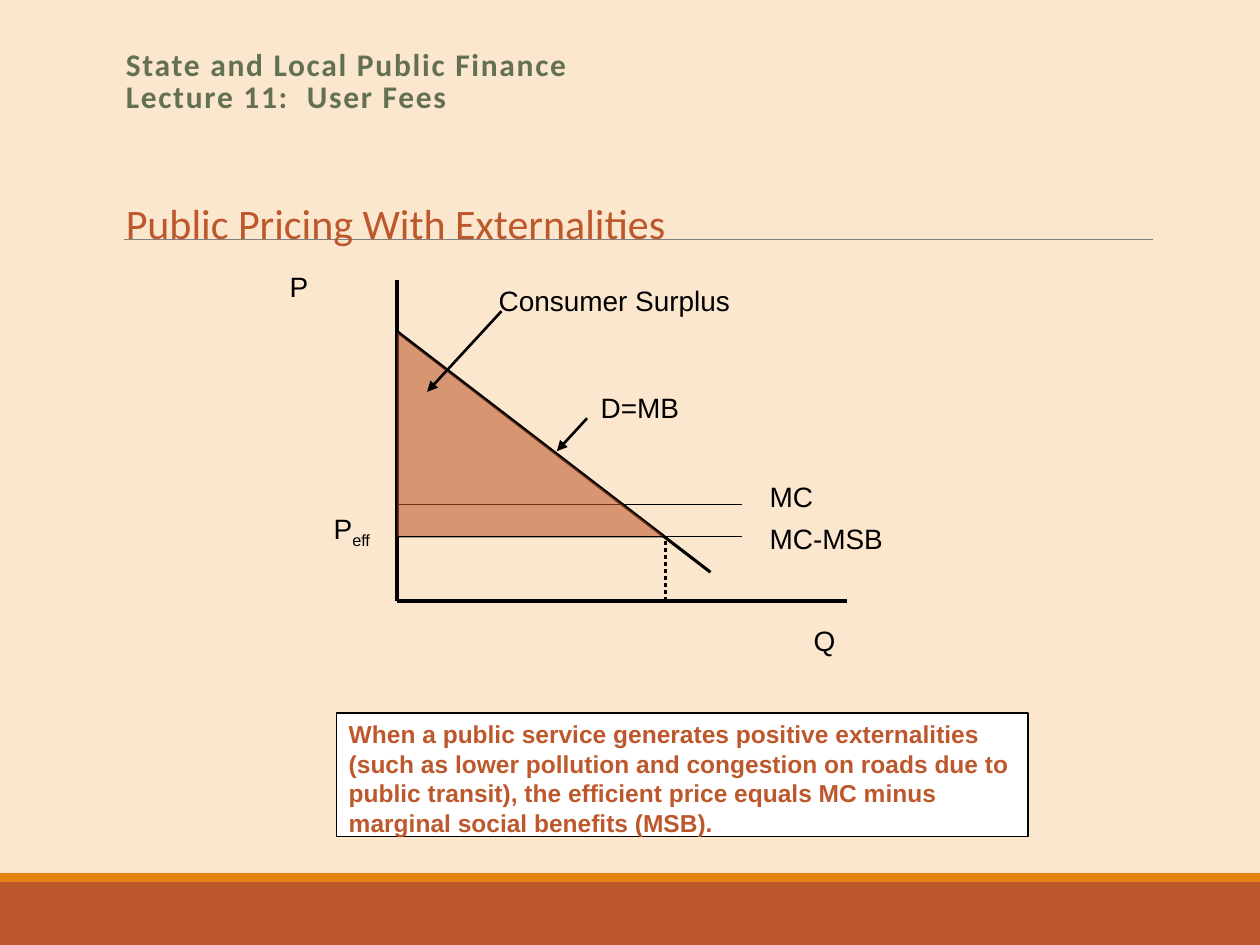
from dataclasses import dataclass

from lxml import etree
from pptx import Presentation
from pptx.dml.color import RGBColor
from pptx.enum.dml import MSO_LINE
from pptx.enum.shapes import MSO_CONNECTOR, MSO_SHAPE
from pptx.enum.text import MSO_ANCHOR
from pptx.oxml.ns import qn
from pptx.util import Pt

RECTANGLE, TRIANGLE = MSO_SHAPE.RECTANGLE, MSO_SHAPE.RIGHT_TRIANGLE
STRAIGHT = MSO_CONNECTOR.STRAIGHT
DOTTED = MSO_LINE.ROUND_DOT
TOP, MIDDLE = MSO_ANCHOR.TOP, MSO_ANCHOR.MIDDLE


@dataclass(frozen=True)
class Theme:
    background: str = "FBE6CE"
    rust: str = "BD582C"
    orange: str = "E48312"
    green: str = "637052"
    gray: str = "808080"
    black: str = "000000"
    white: str = "FFFFFF"
    heading_font: str = "Calibri"
    body_font: str = "Arial"
    title_size: int = 24
    header_size: int = 18
    label_size: int = 16
    note_size: int = 14


THEME = Theme()
WIDTH, HEIGHT = 720, 540
FOOTER_TOP, STRIPE_HEIGHT = 504, 5

HEADER = ["State and Local Public Finance", "Lecture 11:  User Fees"]
TITLE = "Public Pricing With Externalities"
NOTE = ("When a public service generates positive externalities (such as lower "
        "pollution and congestion on roads due to public transit), the efficient "
        "price equals MC minus marginal social benefits (MSB).")

# Diagram coordinates
AXIS_X, AXIS_Y = 226.8, 343.4
DEMAND_TOP = 189.4
QUANTITY, PRICE = 380.2, 306.7
COST, COST_END = 288.3, 424.1

# start, end, weight, dash, arrowhead
AXES_AND_DEMAND = [
    ((AXIS_X, 159.8), (AXIS_X, AXIS_Y), 2, None, False),
    ((AXIS_X, AXIS_Y), (483.8, AXIS_Y), 2, None, False),
    ((AXIS_X, DEMAND_TOP), (406, 327), 1.75, None, False),
    ((QUANTITY, AXIS_Y), (QUANTITY, PRICE), 2, DOTTED, False),
    ((335.5, 239), (318.2, 257.8), 1.5, None, True),
    ((AXIS_X, COST), (COST_END, COST), 0.75, None, False),
]
SURPLUS_ARROW_AND_PRICE = [
    ((286.6, 177.8), (244.1, 223.9), 1.5, None, True),
    ((AXIS_X, PRICE), (COST_END, PRICE), 0.75, None, False),
]

# text, subscript, box
LABELS = [
    ("P", "", (158.4, 150.5, 26, 36.7)),
    ("Q", "", (457.9, 352.8, 26, 36.7)),
    ("MC", "", (432.7, 270.7, 97.2, 27.4)),
    ("MC-MSB", "", (432.7, 294.5, 97.2, 27.4)),
    ("D=MB", "", (336.2, 219.6, 85.7, 27.4)),
    ("P", "eff", (183.6, 288.7, 77, 55.4)),
    ("Consumer Surplus", "", (277.9, 158.4, 172, 28.8)),
]


def rgb(color):
    return RGBColor.from_string(color)


def add_line(slide, start, end, weight, dash=None, arrow=False, color=THEME.black):
    line = slide.shapes.add_connector(STRAIGHT, *map(Pt, start + end))
    line.line.color.rgb = rgb(color)
    line.line.width = Pt(weight)
    if dash:
        line.line.dash_style = dash
    properties = line._element.spPr
    if arrow:
        outline = properties.find(qn("a:ln"))
        etree.SubElement(outline, qn("a:tailEnd"), type="triangle")
    etree.SubElement(properties, qn("a:effectLst"))


def add_block(slide, kind, box, fill, outline=None, opacity=None):
    shape = slide.shapes.add_shape(kind, *map(Pt, box))
    shape.shadow.inherit = False
    shape.fill.solid()
    shape.fill.fore_color.rgb = rgb(fill)
    if opacity:
        color = shape._element.spPr.find(f".//{qn('a:srgbClr')}")
        etree.SubElement(color, qn("a:alpha"), val=str(opacity * 1000))
    if outline:
        shape.line.color.rgb = rgb(outline)
        shape.line.width = Pt(0.75)
    else:
        shape.line.fill.background()
    return shape


def add_run(paragraph, text, size, color, font=THEME.body_font, bold=False):
    run = paragraph.add_run()
    run.text = text
    run.font.name = font
    run.font.size = Pt(size)
    run.font.bold = bold
    run.font.color.rgb = rgb(color)
    return run


def add_text_box(slide, box, anchor=TOP):
    """Add a wrapping text box and return its first paragraph."""
    frame = slide.shapes.add_textbox(*map(Pt, box)).text_frame
    frame.word_wrap = True
    frame.vertical_anchor = anchor
    return frame.paragraphs[0]


def add_frame(slide):
    """Draw the footer bands, rule, header and title."""
    add_block(slide, RECTANGLE, (0, FOOTER_TOP, WIDTH, HEIGHT - FOOTER_TOP), THEME.rust)
    add_block(slide, RECTANGLE,
              (0, FOOTER_TOP - STRIPE_HEIGHT, WIDTH, STRIPE_HEIGHT), THEME.orange)
    add_line(slide, (70.6, 136.8), (658.8, 136.8), 0.5, color=THEME.gray)

    title = add_text_box(slide, (64.8, 109.4, 364.3, 36))
    add_run(title, TITLE, THEME.title_size, THEME.rust, THEME.heading_font)

    header = add_text_box(slide, (64.8, 23.8, 594, 46.8), MIDDLE)
    header.line_spacing = 0.85
    for index, text in enumerate(HEADER):
        if index:
            header.add_line_break()
        run = add_run(header, text, THEME.header_size, THEME.green,
                      THEME.heading_font, bold=True)
        run._r.get_or_add_rPr().set("spc", "100")


def add_diagram(slide):
    for line in AXES_AND_DEMAND:
        add_line(slide, *line)
    add_block(slide, TRIANGLE,
              (AXIS_X, DEMAND_TOP, QUANTITY - AXIS_X, PRICE - DEMAND_TOP),
              THEME.rust, THEME.black, opacity=57)
    for line in SURPLUS_ARROW_AND_PRICE:
        add_line(slide, *line)
    for text, subscript, box in LABELS:
        paragraph = add_text_box(slide, box)
        add_run(paragraph, text, THEME.label_size, THEME.black)
        if subscript:
            run = add_run(paragraph, subscript, THEME.label_size, THEME.black)
            run._r.get_or_add_rPr().set("baseline", "-25000")


def add_note(slide):
    note = add_block(slide, RECTANGLE, (192.2, 407.5, 395.3, 70.6),
                     THEME.white, THEME.black)
    frame = note.text_frame
    frame.word_wrap = True
    frame.vertical_anchor = TOP
    paragraph = frame.paragraphs[0]
    paragraph.alignment = 1  # left
    add_run(paragraph, NOTE, THEME.note_size, THEME.rust, bold=True)


def main():
    presentation = Presentation()
    presentation.slide_width, presentation.slide_height = Pt(WIDTH), Pt(HEIGHT)
    slide = presentation.slides.add_slide(presentation.slide_layouts[6])
    slide.background.fill.solid()
    slide.background.fill.fore_color.rgb = rgb(THEME.background)
    add_frame(slide)
    add_diagram(slide)
    add_note(slide)
    presentation.save("out.pptx")


if __name__ == "__main__":
    main()
